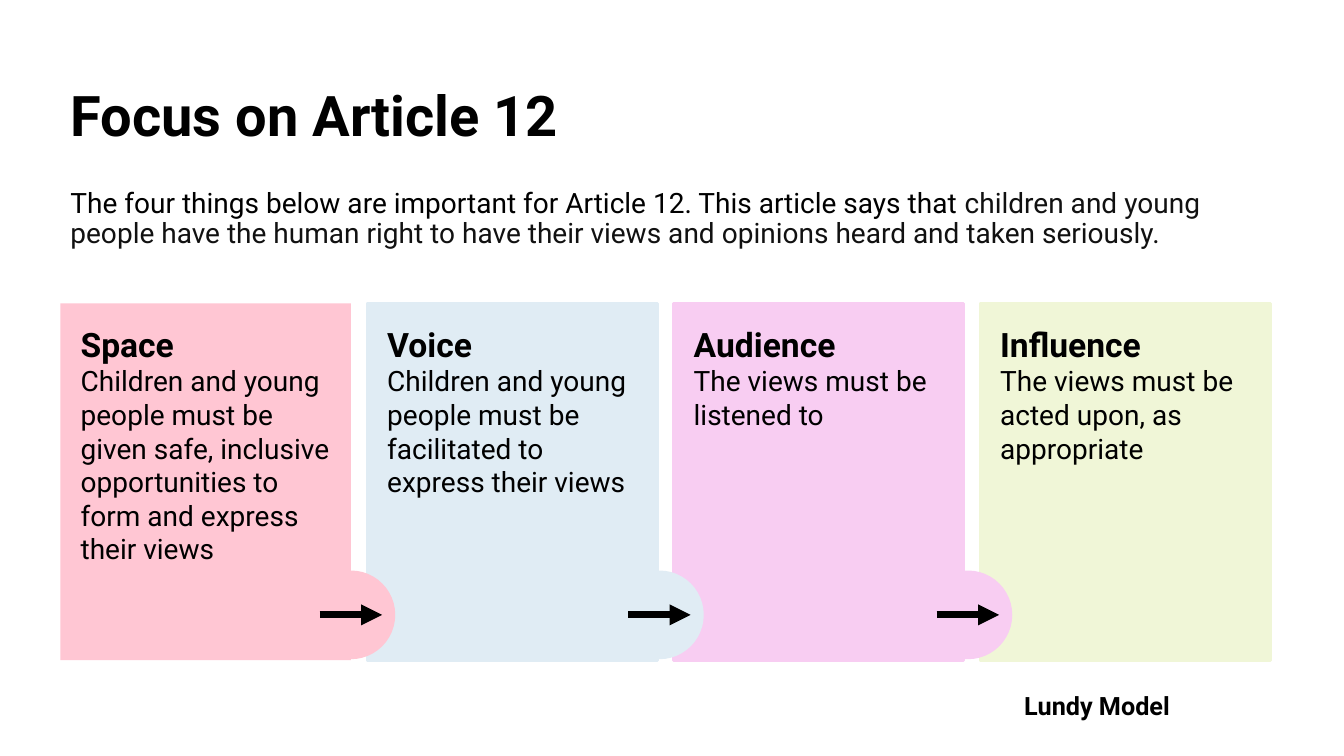
from lxml.etree import SubElement
from pptx import Presentation
from pptx.dml.color import RGBColor
from pptx.enum.shapes import MSO_CONNECTOR, MSO_SHAPE
from pptx.enum.text import MSO_ANCHOR, PP_ALIGN
from pptx.oxml.ns import qn
from pptx.util import Inches, Pt

LEFT, WIDTH = 0.6, 11.99
CARD_TOP, CARD_WIDTH, CARD_HEIGHT, CARD_PITCH = 3.01, 2.88, 3.54, 3.04
BADGE_LEFT, BADGE_TOP, BADGE_SIZE, BADGE_PITCH = 3.04, 5.66, 0.88, 3.06

CARDS = [
    ("Space", "Children and young people must be given safe, inclusive "
              "opportunities to form and express their views", "FFC6D3"),
    ("Voice", "Children and young people must be facilitated to express their views",
     "E0ECF4"),
    ("Audience", "The views must be listened to", "F8CDF2"),
    ("Influence", "The views must be acted upon, as appropriate", "F0F6D7"),
]


def color(hex_value):
    return RGBColor.from_string(hex_value)


def add_run(paragraph, text, size, bold=False, hex_value="000000"):
    run = paragraph.add_run()
    run.text = text
    font_values = {"name": "Roboto", "size": Pt(size), "bold": bold}
    for name, value in font_values.items():
        setattr(run.font, name, value)
    run.font.color.rgb = color(hex_value)


def format_paragraph(paragraph, line_spacing=1.0):
    values = {"alignment": PP_ALIGN.LEFT, "line_spacing": line_spacing,
              "space_before": Pt(0), "space_after": Pt(0)}
    for name, value in values.items():
        setattr(paragraph, name, value)


def add_filled_shape(slide, kind, left, top, width, height, hex_value):
    shape = slide.shapes.add_shape(
        kind, Inches(left), Inches(top), Inches(width), Inches(height))
    shape.shadow.inherit = False
    shape.fill.solid()
    shape.fill.fore_color.rgb = color(hex_value)
    shape.line.fill.background()
    return shape


def add_title(slide, left, top, width, height):
    title = slide.shapes.title
    box = {"left": left, "top": top, "width": width, "height": height}
    for name, value in box.items():
        setattr(title, name, Inches(value))
    title.text_frame.vertical_anchor = MSO_ANCHOR.MIDDLE
    paragraph = title.text_frame.paragraphs[0]
    format_paragraph(paragraph, 0.9)
    add_run(paragraph, "Focus on Article 12", 40, bold=True)


def add_text_box(slide, left, top, width, height, line_spacing=1.0):
    """Add an empty wrapping text box and return its first paragraph."""
    box = slide.shapes.add_textbox(
        Inches(left), Inches(top), Inches(width), Inches(height))
    box.text_frame.word_wrap = True
    paragraph = box.text_frame.paragraphs[0]
    format_paragraph(paragraph, line_spacing)
    return paragraph


def add_introduction(slide, left, top, width, height):
    paragraph = add_text_box(slide, left, top, width, height, 0.9)
    add_run(paragraph, "The four things below are important for Article 12. "
                       "This article says that ", 20)
    add_run(paragraph, "children and young people have the human right to have their "
                       "views and opinions heard and taken seriously.", 20,
            hex_value="111111")


def add_model_label(slide, left, top, width, height):
    paragraph = add_text_box(slide, left, top, width, height)
    add_run(paragraph, "Lundy Model", 18, bold=True)


def add_card(slide, left, top, heading, body, hex_value, outlined):
    card = add_filled_shape(slide, MSO_SHAPE.RECTANGLE, left, top,
                            CARD_WIDTH, CARD_HEIGHT, hex_value)
    if outlined:
        card.line.color.rgb = color(hex_value)
        card.line.width = Pt(2)
    frame = card.text_frame
    frame.word_wrap = True
    frame.vertical_anchor = MSO_ANCHOR.TOP
    for side in ("left", "top", "right", "bottom"):
        setattr(frame, f"margin_{side}", Inches(0.2))
    for paragraph, text, size, bold in (
            (frame.paragraphs[0], heading, 24, True),
            (frame.add_paragraph(), body, 20, False)):
        format_paragraph(paragraph)
        add_run(paragraph, text, size, bold)


def add_arrow_badge(slide, left, top, size, hex_value):
    """Add a circle in the card's colour with an arrow to the next card."""
    add_filled_shape(slide, MSO_SHAPE.OVAL, left, top, size, size, hex_value)
    middle = Inches(top + size / 2)
    arrow = slide.shapes.add_connector(
        MSO_CONNECTOR.STRAIGHT, Inches(left + 0.13), middle,
        Inches(left + 0.75), middle)
    arrow.line.color.rgb = color("000000")
    arrow.line.width = Pt(5)
    SubElement(arrow.line._get_or_add_ln(), qn("a:tailEnd"), type="triangle")
    SubElement(arrow._element.spPr, qn("a:effectLst"))


def main():
    presentation = Presentation()
    presentation.slide_width = Inches(13.33)
    presentation.slide_height = Inches(7.5)
    slide = presentation.slides.add_slide(presentation.slide_layouts[5])

    add_title(slide, LEFT, 0.45, WIDTH, 1.45)
    add_introduction(slide, LEFT, 1.83, WIDTH, 1.02)
    add_model_label(slide, 10.06, 6.8, 1.94, 0.4)
    for index, (heading, body, hex_value) in enumerate(CARDS):
        add_card(slide, LEFT + index * CARD_PITCH, CARD_TOP,
                 heading, body, hex_value, outlined=index > 0)
    for index, (_, _, hex_value) in enumerate(CARDS[:-1]):
        add_arrow_badge(slide, BADGE_LEFT + index * BADGE_PITCH, BADGE_TOP,
                        BADGE_SIZE, hex_value)
    presentation.save("out.pptx")


if __name__ == "__main__":
    main()
